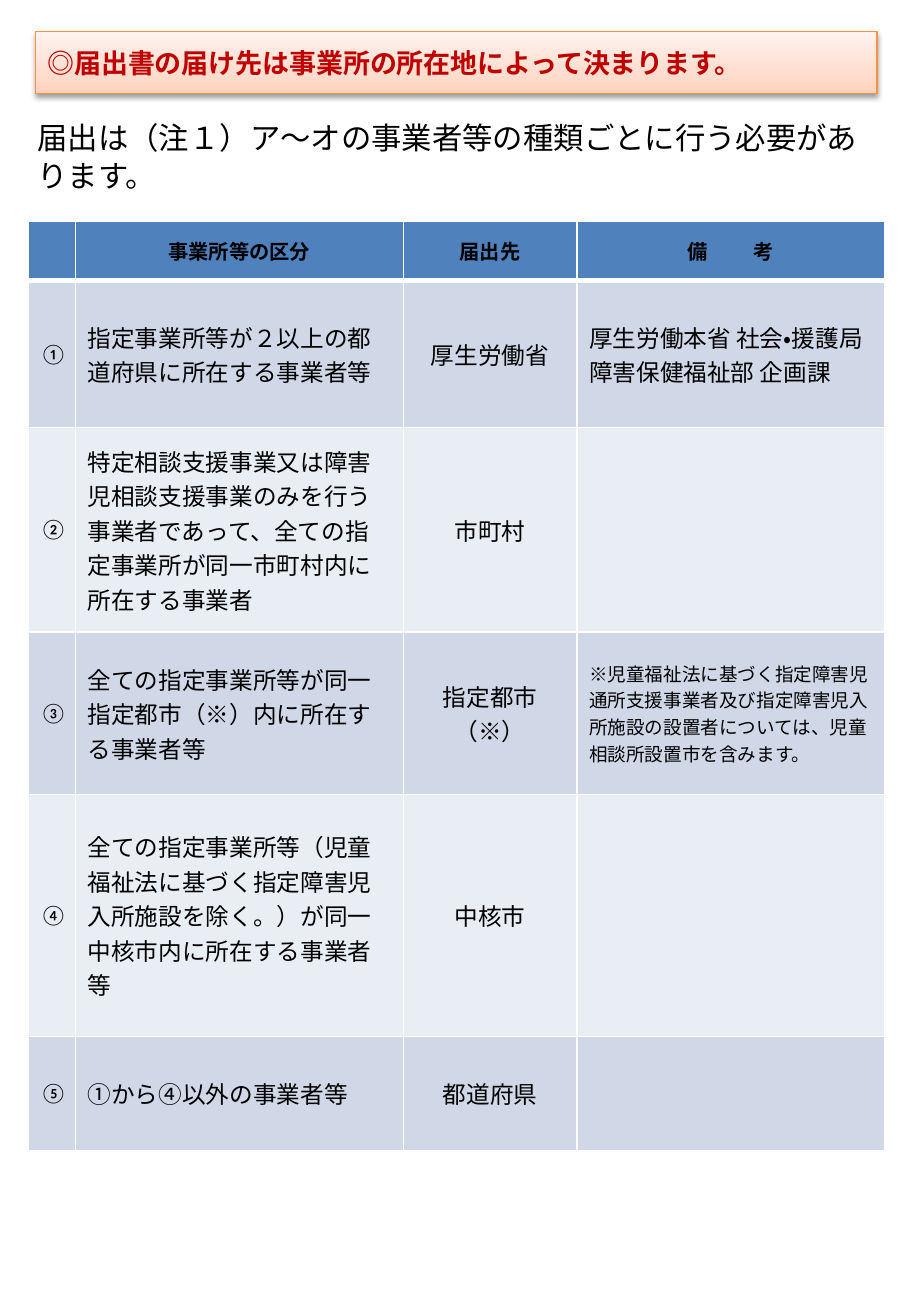
"""Build the slide that tells operators where to file their notification."""
from pptx import Presentation, util as u
from pptx.dml.color import RGBColor
from pptx.enum import lang, text
from pptx.oxml import parse_xml
from pptx.oxml.ns import nsdecls

RED = RGBColor(0xC0, 0x00, 0x00)
BLACK = RGBColor(0x00, 0x00, 0x00)
WHITE = RGBColor(0xFF, 0xFF, 0xFF)
ORANGE = RGBColor(0xF6, 0x92, 0x40)
HEADER_BLUE = RGBColor(0x4F, 0x81, 0xBD)
BANDS = (RGBColor(0xD0, 0xD8, 0xE8), RGBColor(0xE9, 0xED, 0xF4))
BANNER_STOPS = (
    (0, RGBColor(0xFF, 0xD2, 0xBD)),
    (35, RGBColor(0xFF, 0xDE, 0xD0)),
    (100, RGBColor(0xFF, 0xF2, 0xED)),
)

COLUMN_WIDTHS = (0.39, 2.7, 1.43, 2.53)
ROW_HEIGHTS = (0.49, 1.21, 1.68, 1.34, 1.99, 0.94)
HEADINGS = ("", "事業所等の区分", "届出先", "備 考")
DESTINATIONS = (
    ("①", "指定事業所等が２以上の都道府県に所在する事業者等", "厚生労働省",
     "厚生労働本省 社会・援護局障害保健福祉部 企画課"),
    ("②", "特定相談支援事業又は障害児相談支援事業のみを行う事業者であって、"
     "全ての指定事業所が同一市町村内に所在する事業者", "市町村", ""),
    ("③", "全ての指定事業所等が同一指定都市（※）内に所在する事業者等", "指定都市（※）",
     "※児童福祉法に基づく指定障害児通所支援事業者及び指定障害児入所施設の設置者については、"
     "児童相談所設置市を含みます。"),
    ("④", "全ての指定事業所等（児童福祉法に基づく指定障害児入所施設を除く。）が"
     "同一中核市内に所在する事業者等", "中核市", ""),
    ("⑤", "①から④以外の事業者等", "都道府県", ""),
)


class NoticePage:
    """Hold the text style and the current slide."""

    style = {"name": "Calibri", "bold": False, "language_id": lang.MSO_LANGUAGE_ID.JAPANESE}

    def __init__(self, deck):
        self.page = deck.slides.add_slide(deck.slide_layouts[5])

    def add_words(self, frame, words, size, color=BLACK, align=text.PP_ALIGN.LEFT, **changes):
        """Put one formatted run into a text frame."""
        para = frame.paragraphs[0]
        para.alignment = align
        span = para.add_run()
        span.text = words
        for key, value in {**self.style, "size": u.Pt(size), **changes}.items():
            setattr(span.font, key, value)
        span.font.color.rgb = color
        return span

    def place(self, box, left, top, width, height):
        """Move and size a shape."""
        for key, value in zip(("left", "top", "width", "height"), (left, top, width, height)):
            setattr(box, key, u.Inches(value))

    def banner(self, words, *place):
        """Turn the title into a shaded banner."""
        box = self.page.shapes.title
        self.place(box, *place)
        stops = "".join(
            f'<a:gs pos="{pos * 1000}"><a:srgbClr val="{color}"/></a:gs>'
            for pos, color in BANNER_STOPS)
        properties = box.element.spPr
        properties.append(parse_xml(
            f'<a:gradFill {nsdecls("a")} rotWithShape="1"><a:gsLst>{stops}</a:gsLst>'
            '<a:lin ang="16200000" scaled="0"/></a:gradFill>'))
        box.line.color.rgb = ORANGE
        box.line.width = u.Pt(0.75)
        properties.append(parse_xml(
            f'<a:effectLst {nsdecls("a")}><a:outerShdw blurRad="40000" dist="20000" '
            'dir="5400000" rotWithShape="0"><a:srgbClr val="000000">'
            '<a:alpha val="38000"/></a:srgbClr></a:outerShdw></a:effectLst>'))
        frame = box.text_frame
        frame.vertical_anchor = text.MSO_ANCHOR.MIDDLE
        frame.auto_size = text.MSO_AUTO_SIZE.NONE
        self.add_words(frame, words, 16, RED, bold=True)

    def lead(self, words, *place):
        """Add the introductory sentence."""
        frame = self.page.shapes.add_textbox(*map(u.Inches, place)).text_frame
        frame.word_wrap = True
        frame.auto_size = text.MSO_AUTO_SIZE.SHAPE_TO_FIT_TEXT
        self.add_words(frame, words, 18)
        frame.paragraphs[0].line_spacing = u.Pt(22)

    def paint(self, cell, color, top=1, bottom=1):
        """Give a cell white borders and a plain fill."""
        for side, points in zip("LRTB", (1, 1, top, bottom)):
            cell._tc.get_or_add_tcPr().append(parse_xml(
                f'<a:ln{side} {nsdecls("a")} w="{u.Pt(points)}"><a:solidFill>'
                f'<a:srgbClr val="{WHITE}"/></a:solidFill></a:ln{side}>'))
        cell.fill.solid()
        cell.fill.fore_color.rgb = color
        cell.vertical_anchor = text.MSO_ANCHOR.MIDDLE

    def table(self, left, top):
        """Add the table of filing destinations."""
        place = (left, top, sum(COLUMN_WIDTHS), sum(ROW_HEIGHTS))
        grid = self.page.shapes.add_table(
            len(ROW_HEIGHTS), len(COLUMN_WIDTHS), *map(u.Inches, place)).table
        for column, width in zip(grid.columns, COLUMN_WIDTHS):
            column.width = u.Inches(width)
        for row, height in zip(grid.rows, ROW_HEIGHTS):
            row.height = u.Inches(height)
        for col, heading in enumerate(HEADINGS):
            cell = grid.cell(0, col)
            self.paint(cell, HEADER_BLUE, bottom=3)
            first, gap, last = heading.partition(" ")
            for words in filter(None, (first + gap, last)):
                span = self.add_words(cell.text_frame, words, 12,
                                      align=text.PP_ALIGN.CENTER, bold=True)
                if words.endswith(" "):
                    span.font._element.set("spc", "1200")
        for row, entries in enumerate(DESTINATIONS, 1):
            for col, words in enumerate(entries):
                cell = grid.cell(row, col)
                self.paint(cell, BANDS[(row - 1) % 2], top=3 if row == 1 else 1)
                if not words:
                    continue
                align = text.PP_ALIGN.CENTER if col == 2 else text.PP_ALIGN.LEFT
                if words.startswith("※"):
                    self.add_words(cell.text_frame, words, 11, name="Arial")
                else:
                    self.add_words(cell.text_frame, words, 14 if col else 12, align=align)


def main():
    deck = Presentation()
    deck.slide_width = u.Inches(7.5)
    deck.slide_height = u.Inches(10.83)
    notice = NoticePage(deck)
    notice.banner("◎届出書の届け先は事業所の所在地によって決まります。", 0.29, 0.26, 6.93, 0.51)
    notice.lead("届出は（注１）ア～オの事業者等の種類ごとに行う必要があります。", 0.21, 0.93, 7.01, 0.71)
    notice.table(0.23, 1.82)
    deck.save("out.pptx")


if __name__ == "__main__":
    main()
